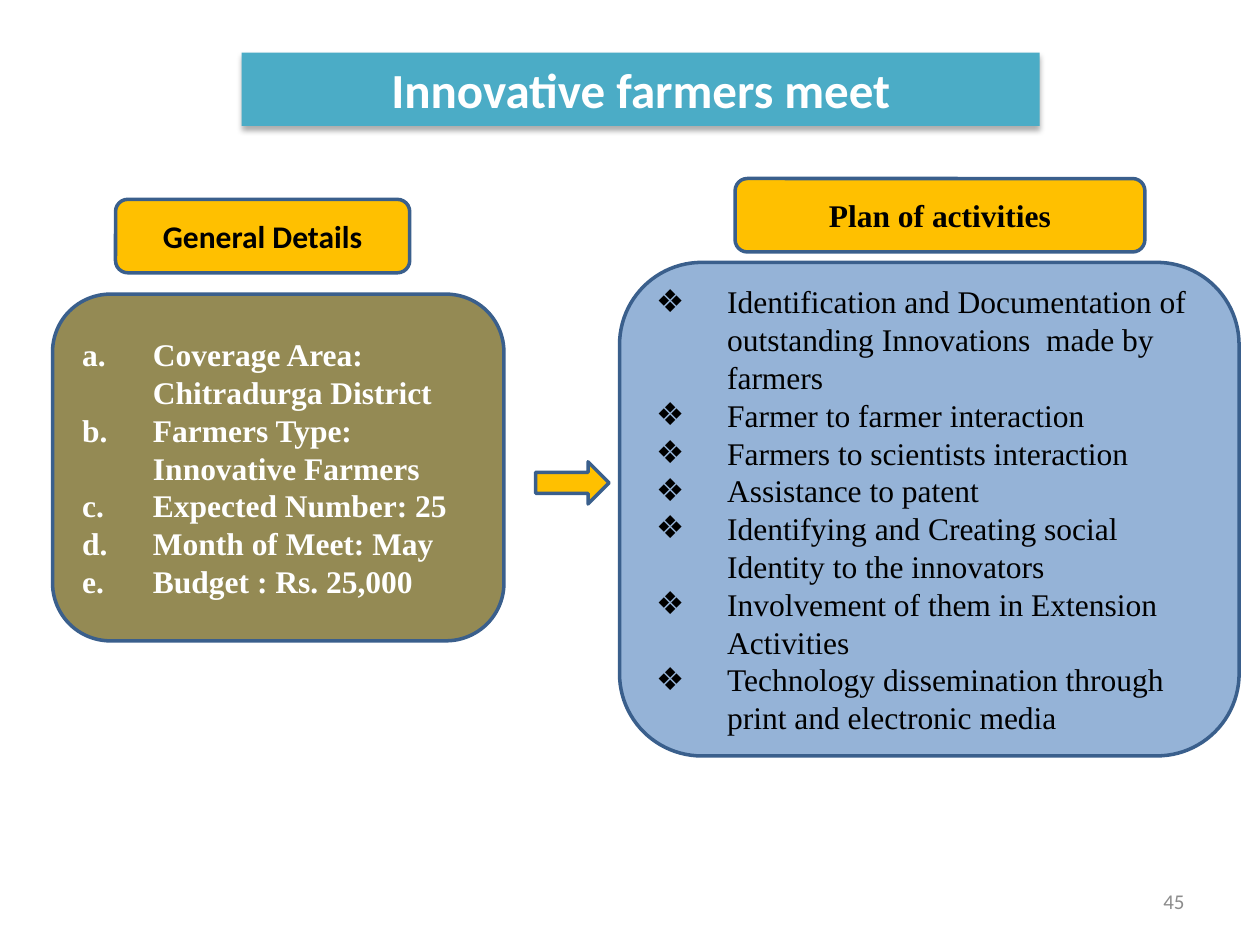
from lxml.etree import SubElement
from pptx import Presentation
from pptx.dml.color import RGBColor
from pptx.enum.shapes import MSO_SHAPE
from pptx.enum.text import MSO_ANCHOR, MSO_AUTO_SIZE, PP_ALIGN
from pptx.oxml.ns import qn
from pptx.util import Cm, Pt

SERIF, SANS = "Times New Roman", "Calibri"
BLACK, WHITE, AMBER, NAVY = "000000", "FFFFFF", "FFC000", "3A5F8C"
INDENT = Cm(1.43)

DETAILS = [
    "Coverage Area: Chitradurga District",
    "Farmers Type: Innovative Farmers",
    "Expected Number: 25",
    "Month of Meet: May",
    "Budget : Rs. 25,000",
]
ACTIVITIES = [
    "Identification and Documentation of outstanding Innovations  made by farmers",
    "Farmer to farmer interaction",
    "Farmers to scientists interaction",
    "Assistance to patent",
    "Identifying and Creating social Identity to the innovators",
    "Involvement of them in Extension Activities",
    "Technology dissemination through print and electronic media",
]


def rgb(value):
    return RGBColor.from_string(value)


def apply(target, values):
    for name, value in values.items():
        setattr(target, name, value)


def place(shape, box):
    apply(shape, dict(zip(("left", "top", "width", "height"), map(Cm, box))))


def paint(shape, fill, outline=None):
    shape.fill.solid()
    shape.fill.fore_color.rgb = rgb(fill)
    if outline:
        shape.line.color.rgb = rgb(outline)
        shape.line.width = Pt(2)


def write(shape, lines, color, size=18, font=SERIF, bold=False,
          align=PP_ALIGN.CENTER):
    frame = shape.text_frame
    apply(frame, {"word_wrap": True, "auto_size": MSO_AUTO_SIZE.NONE,
                  "vertical_anchor": MSO_ANCHOR.MIDDLE})
    frame.text = "\n".join(lines)
    for paragraph in frame.paragraphs:
        apply(paragraph, {"alignment": align, "space_before": Pt(0)})
        for run in paragraph.runs:
            apply(run.font, {"name": font, "size": Pt(size), "bold": bold})
            run.font.color.rgb = rgb(color)


def add_shadow(shape):
    effects = SubElement(shape._element.spPr, qn("a:effectLst"))
    shadow = SubElement(effects, qn("a:outerShdw"), blurRad=str(Pt(3.5)),
                        dist=str(Pt(2.2)), dir="5400000", rotWithShape="0")
    tint = SubElement(shadow, qn("a:srgbClr"), val=BLACK)
    SubElement(tint, qn("a:alpha"), val="32000")


def fill_title(title, text):
    place(title, (4.87, 1.06, 16.09, 1.48))
    paint(title, "4BACC6")
    add_shadow(title)
    write(title, [text], WHITE, size=28, font=SANS, bold=True)


def fill_panel(body, box, fill, lines, color, marker, bold=False):
    """Turn a body placeholder into a rounded panel with a marked list."""
    place(body, box)
    outline = SubElement(body._element.spPr, qn("a:prstGeom"), prst="roundRect")
    SubElement(outline, qn("a:avLst"))
    paint(body, fill, NAVY)
    write(body, lines, color, bold=bold, align=PP_ALIGN.LEFT)
    tag, values = marker
    for paragraph in body.text_frame.paragraphs:
        properties = paragraph._p.get_or_add_pPr()
        for name, value in {"marL": INDENT, "indent": -INDENT}.items():
            properties.set(name, str(value))
        SubElement(properties, qn(tag), values)


def add_block(slide, kind, box):
    block = slide.shapes.add_shape(kind, *map(Cm, box))
    block.shadow.inherit = False
    paint(block, AMBER, NAVY)
    return block


def add_heading(slide, box, text, font):
    heading = add_block(slide, MSO_SHAPE.ROUNDED_RECTANGLE, box)
    write(heading, [text], BLACK, font=font, bold=True)


def add_page_number(slide, text):
    number = slide.shapes.add_textbox(*map(Cm, (18.2, 17.65, 5.93, 1.02)))
    write(number, [text], "8C8C8C", size=12, font=SANS, align=PP_ALIGN.RIGHT)


def main():
    deck = Presentation()
    apply(deck, {"slide_width": Cm(25.4), "slide_height": Cm(19.05)})
    slide = deck.slides.add_slide(deck.slide_layouts.get_by_name("Two Content"))
    title, details, activities = slide.placeholders

    # Title band
    fill_title(title, "Innovative farmers meet")

    # List panels
    fill_panel(details, (1.06, 5.93, 9.1, 6.99), "948A54", DETAILS, WHITE,
               ("a:buAutoNum", {"type": "alphaLcPeriod"}), bold=True)
    fill_panel(activities, (12.49, 5.29, 12.49, 9.95), "95B3D7", ACTIVITIES,
               BLACK, ("a:buChar", {"char": "❖"}))

    # Panel headings and the arrow between the panels
    add_heading(slide, (14.82, 3.6, 8.26, 1.48), "Plan of activities", SERIF)
    add_heading(slide, (2.33, 4.02, 5.93, 1.48), "General Details", SANS)
    add_block(slide, MSO_SHAPE.RIGHT_ARROW, (10.8, 9.31, 1.48, 0.85))

    # Page number
    add_page_number(slide, "45")

    deck.save("out.pptx")


if __name__ == "__main__":
    main()
